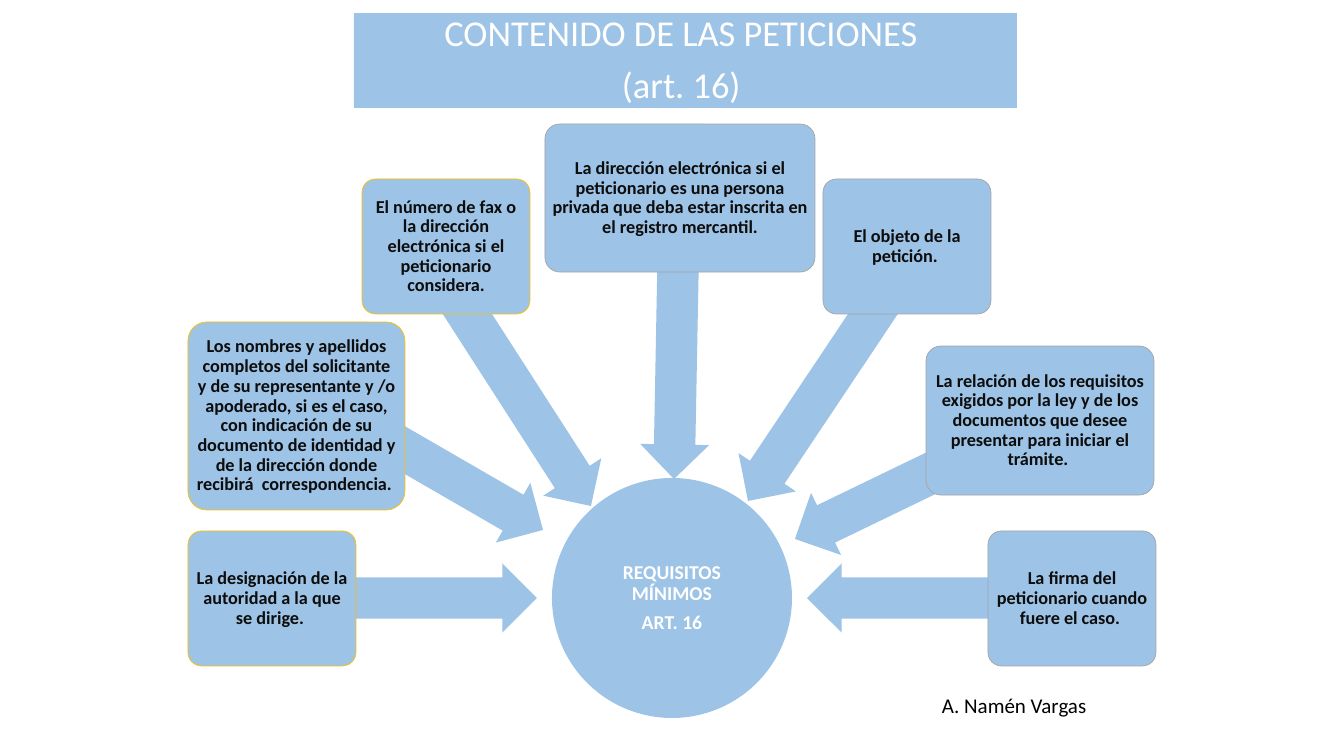
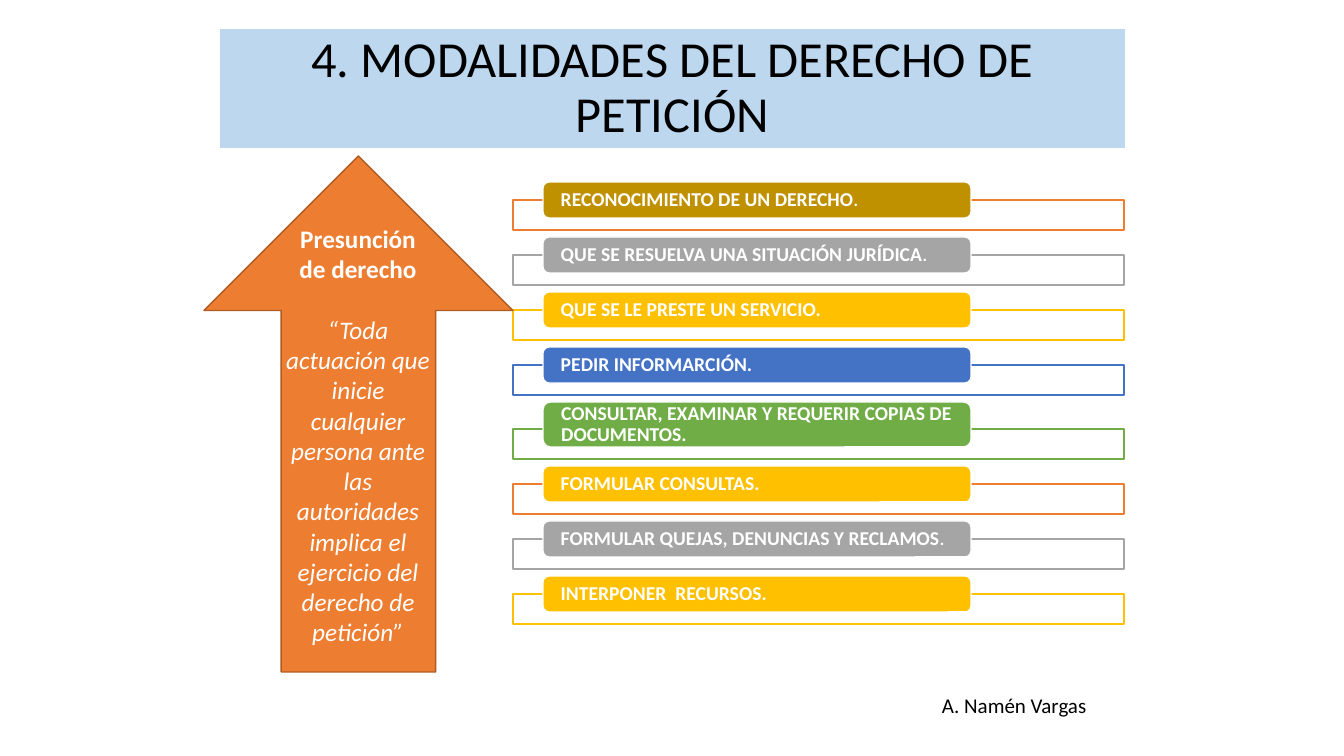
"""Build two slides on the content and the kinds of petitions."""
from math import atan2, degrees, hypot

from pptx import Presentation
from pptx.dml.color import RGBColor
from pptx.enum.shapes import MSO_SHAPE
from pptx.enum.text import MSO_ANCHOR, MSO_AUTO_SIZE, PP_ALIGN
from pptx.util import Emu, Pt

SLIDE_WIDTH, SLIDE_HEIGHT = 1344, 756
SCALE = 12192000 / SLIDE_WIDTH
FONT = "Calibri"
WHITE, BLACK, INK = "FFFFFF", "000000", "0D0D0D"
BLUE, PALE_BLUE, ROYAL = "9DC3E6", "BDD7EE", "4472C4"
GOLD, DARK_GOLD, GRAY = "FFC000", "BF9000", "A5A5A5"
ORANGE, DARK_ORANGE, GREEN = "ED7D31", "AF5C24", "70AD47"

AUTHOR = "A. Namén Vargas"
AUTHOR_BOX = (932, 688, 219, 35)

CONTENT_TITLE = ["CONTENIDO DE LAS PETICIONES ", "(art. 16) "]
CONTENT_TITLE_BOX = (354, 13, 663, 95)
HUB_TEXT = ["REQUISITOS MÍNIMOS", "ART. 16"]
HUB_BOX = (552, 478, 240, 240)
ARROW_WIDTH = 69
REQUIREMENTS = [
    ("La designación de la autoridad a la que se dirige. ",
     (188, 531, 168, 135), GOLD, (272, 598), (537, 598)),
    ("Los nombres y apellidos completos del solicitante y de su representante y /o "
     "apoderado, si es el caso, con indicación de su documento de identidad y de la "
     "dirección donde recibirá  correspondencia. ",
     (188, 322, 217, 188), GOLD, (306, 393), (543, 530)),
    ("El número de fax o la dirección electrónica si el peticionario considera.",
     (362, 179, 168, 135), GOLD, (439, 270), (591, 506)),
    ("La dirección electrónica si el peticionario es una persona privada que deba "
     "estar inscrita en el registro mercantil.",
     (545, 124, 270, 148), GRAY, (679, 214), (674, 479)),
    ("El objeto de la petición. ",
     (823, 179, 168, 135), GRAY, (907, 263), (748, 501)),
    ("La relación de los requisitos exigidos por la ley y de los documentos que desee "
     "presentar para iniciar el trámite. ",
     (926, 346, 228, 149), GRAY, (1041, 420), (795, 539)),
    ("La firma del peticionario cuando fuere el caso. ",
     (988, 531, 168, 135), GRAY, (1072, 598), (807, 598)),
]

KINDS_TITLE = ["4. MODALIDADES DEL DERECHO DE PETICIÓN"]
KINDS_TITLE_BOX = (220, 29, 905, 119)
KINDS = [
    ("RECONOCIMIENTO DE UN DERECHO", 12, DARK_GOLD, ORANGE, 36),
    ("QUE SE RESUELVA UNA SITUACIÓN JURÍDICA", 12, GRAY, GRAY, 36),
    ("QUE SE LE PRESTE UN SERVICIO", 14, GOLD, GOLD, 36),
    ("PEDIR INFORMARCIÓN", 14, ROYAL, ROYAL, 36),
    ("CONSULTAR, EXAMINAR Y REQUERIR COPIAS DE DOCUMENTOS", 14, GREEN, GREEN, 45),
    ("FORMULAR CONSULTAS", 14, GOLD, ORANGE, 36),
    ("FORMULAR QUEJAS, DENUNCIAS Y RECLAMOS", 12, GRAY, GRAY, 36),
    ("INTERPONER  RECURSOS", 14, GOLD, GOLD, 36),
]
KINDS_TOP, KIND_OVERLAP, KIND_GAP = 182, 18, 7
FRAME_LEFT, FRAME_WIDTH, FRAME_HEIGHT = 513, 611, 30
TAG_LEFT, TAG_WIDTH = 543, 428
PRESUMPTION = [
    "Presunción de derecho",
    "“Toda actuación que inicie cualquier persona ante las autoridades implica el "
    "ejercicio del derecho de petición”",
]
PRESUMPTION_ARROW = (204, 156, 309, 516)
PRESUMPTION_BOX = (275, 218, 166, 437)


def px(value):
    return Emu(round(value * SCALE))


def color(hex_string):
    return RGBColor.from_string(hex_string)


def write(shape, texts, size, text_color, bold=False, align=PP_ALIGN.CENTER,
          insets=(3, 3), anchor=MSO_ANCHOR.MIDDLE, line_spacing=0.9, gap=0.35):
    frame = shape.text_frame
    frame.word_wrap = True
    frame.auto_size = MSO_AUTO_SIZE.NONE
    frame.vertical_anchor = anchor
    frame.margin_left = frame.margin_right = px(insets[0])
    frame.margin_top = frame.margin_bottom = px(insets[1])
    for index, text in enumerate(texts):
        paragraph = frame.add_paragraph() if index else frame.paragraphs[0]
        paragraph.add_run().text = text
        paragraph.alignment = align
        paragraph.line_spacing = line_spacing
        paragraph.space_before = Pt(round(size * gap) if index else 0)
        paragraph.space_after = Pt(0)
        paragraph.font.name = FONT
        paragraph.font.size = Pt(size)
        paragraph.font.bold = bold
        paragraph.font.color.rgb = color(text_color)
    return frame.paragraphs


def add_shape(slide, kind, box, fill, line=None, line_width=1, adjustments=()):
    shape = slide.shapes.add_shape(kind, *map(px, box))
    shape.shadow.inherit = False
    shape.fill.solid()
    shape.fill.fore_color.rgb = color(fill)
    if line:
        shape.line.color.rgb = color(line)
        shape.line.width = Pt(line_width)
    else:
        shape.line.fill.background()
    for index, value in enumerate(adjustments):
        shape.adjustments[index] = value
    return shape


def add_slide(presentation, title_lines, title_box, title_fill, title_size, title_color):
    slide = presentation.slides.add_slide(presentation.slide_layouts[5])
    title = slide.shapes.title
    title.left, title.top, title.width, title.height = map(px, title_box)
    title.fill.solid()
    title.fill.fore_color.rgb = color(title_fill)
    write(title, title_lines, title_size, title_color, insets=(15, 0))
    author = slide.shapes.add_textbox(*map(px, AUTHOR_BOX))
    write(author, [AUTHOR], 15, BLACK, align=PP_ALIGN.LEFT, insets=(10, 5),
          anchor=MSO_ANCHOR.TOP, line_spacing=1)
    return slide


def add_block_arrow(slide, tail, tip):
    run, rise = tip[0] - tail[0], tip[1] - tail[1]
    length = hypot(run, rise)
    left = (tail[0] + tip[0] - length) / 2
    top = (tail[1] + tip[1] - ARROW_WIDTH) / 2
    arrow = add_shape(slide, MSO_SHAPE.RIGHT_ARROW, (left, top, length, ARROW_WIDTH),
                      BLUE, adjustments=(0.6, 0.5))
    arrow.rotation = degrees(atan2(rise, run))


def add_content_slide(presentation):
    slide = add_slide(presentation, CONTENT_TITLE, CONTENT_TITLE_BOX, BLUE, 26, WHITE)
    hub = add_shape(slide, MSO_SHAPE.OVAL, HUB_BOX, BLUE)
    write(hub, HUB_TEXT, 14, WHITE, bold=True, insets=(1, 1))
    for text, box, line, tail, tip in REQUIREMENTS:
        add_block_arrow(slide, tail, tip)
        card = add_shape(slide, MSO_SHAPE.ROUNDED_RECTANGLE, box, BLUE, line, 0.5, (0.1,))
        write(card, [text], 13, INK, bold=True)


def add_kinds_slide(presentation):
    slide = add_slide(presentation, KINDS_TITLE, KINDS_TITLE_BOX, PALE_BLUE, 36, BLACK)
    top = KINDS_TOP
    for text, stop_size, fill, line, height in KINDS:
        frame_top = top + height - KIND_OVERLAP
        add_shape(slide, MSO_SHAPE.RECTANGLE,
                  (FRAME_LEFT, frame_top, FRAME_WIDTH, FRAME_HEIGHT), WHITE, line)
        tag = add_shape(slide, MSO_SHAPE.ROUNDED_RECTANGLE,
                        (TAG_LEFT, top, TAG_WIDTH, height), fill, WHITE)
        paragraph = write(tag, [text], 14, WHITE, bold=True, align=PP_ALIGN.LEFT,
                          insets=(16, 0))[0]
        full_stop = paragraph.add_run()
        full_stop.text = "."
        full_stop.font.size = Pt(stop_size)
        top = frame_top + FRAME_HEIGHT + KIND_GAP

    add_shape(slide, MSO_SHAPE.UP_ARROW, PRESUMPTION_ARROW, ORANGE, DARK_ORANGE)
    presumption = slide.shapes.add_textbox(*map(px, PRESUMPTION_BOX))
    heading, quotation = write(presumption, PRESUMPTION, 18, WHITE, insets=(10, 5),
                               anchor=MSO_ANCHOR.TOP, line_spacing=1, gap=1.22)
    heading.font.bold = True
    quotation.font.italic = True


def main():
    presentation = Presentation()
    presentation.slide_width = px(SLIDE_WIDTH)
    presentation.slide_height = px(SLIDE_HEIGHT)
    add_content_slide(presentation)
    add_kinds_slide(presentation)
    presentation.save("out.pptx")


if __name__ == "__main__":
    main()
